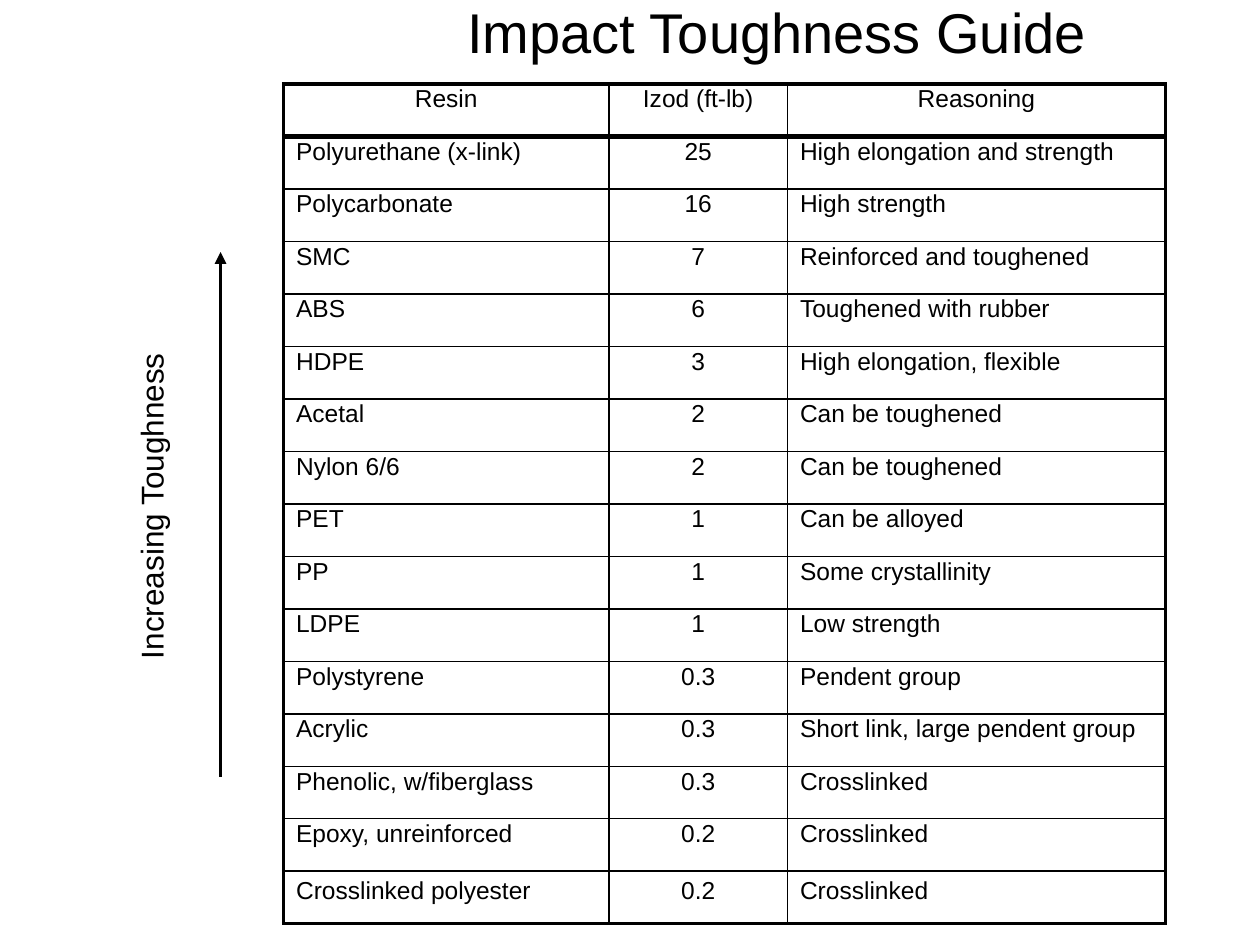
from typing import NamedTuple

from lxml.etree import SubElement
from pptx import Presentation
from pptx.dml.color import RGBColor
from pptx.enum.shapes import MSO_CONNECTOR
from pptx.enum.text import MSO_ANCHOR, MSO_AUTO_SIZE, PP_ALIGN
from pptx.oxml.ns import qn
from pptx.util import Pt

FONT = "Arial"
BLACK = "000000"
THIN, OUTER, HEADER_RULE = 1, 2.25, 3
COLUMN_WIDTHS = (186, 102, 216)
ROW_HEIGHT = 30


class Resin(NamedTuple):
    name: str
    izod: str
    reasoning: str


ROWS = [
    Resin("Resin", "Izod (ft-lb)", "Reasoning"),
    Resin("Polyurethane (x-link)", "25", "High elongation and strength"),
    Resin("Polycarbonate", "16", "High strength"),
    Resin("SMC", "7", "Reinforced and toughened"),
    Resin("ABS", "6", "Toughened with rubber"),
    Resin("HDPE", "3", "High elongation, flexible"),
    Resin("Acetal", "2", "Can be toughened"),
    Resin("Nylon 6/6", "2", "Can be toughened"),
    Resin("PET", "1", "Can be alloyed"),
    Resin("PP", "1", "Some crystallinity"),
    Resin("LDPE", "1", "Low strength"),
    Resin("Polystyrene", "0.3", "Pendent group"),
    Resin("Acrylic", "0.3", "Short link, large pendent group"),
    Resin("Phenolic, w/fiberglass", "0.3", "Crosslinked"),
    Resin("Epoxy, unreinforced", "0.2", "Crosslinked"),
    Resin("Crosslinked polyester", "0.2", "Crosslinked"),
]


def rgb(color: str) -> RGBColor:
    return RGBColor.from_string(color)


def write(tf, text: str, size: float, align=PP_ALIGN.LEFT):
    """Fill a text frame with one formatted paragraph and return it."""
    tf.text = text
    p = tf.paragraphs[0]
    p.alignment = align
    font = p.runs[0].font
    font.name, font.size, font.bold = FONT, Pt(size), False
    font.color.rgb = rgb(BLACK)
    return p


def place(s, left: float, top: float, width: float, height: float) -> None:
    s.left, s.top, s.width, s.height = map(Pt, (left, top, width, height))


def set_borders(cell, left: float, right: float, top: float, bottom: float) -> None:
    tc_pr = cell._tc.get_or_add_tcPr()
    for side, width in zip("LRTB", (left, right, top, bottom)):
        ln = SubElement(tc_pr, qn(f"a:ln{side}"), w=str(Pt(width)))
        fill = SubElement(ln, qn("a:solidFill"))
        SubElement(fill, qn("a:srgbClr"), val=BLACK)


def add_resin_table(slide, left: float, top: float) -> None:
    n_rows, n_cols = len(ROWS), len(COLUMN_WIDTHS)
    last_row, last_col = n_rows - 1, n_cols - 1
    table = slide.shapes.add_table(
        n_rows, n_cols, Pt(left), Pt(top),
        Pt(sum(COLUMN_WIDTHS)), Pt(n_rows * ROW_HEIGHT)).table
    table.first_row = table.horz_banding = False
    for column, width in zip(table.columns, COLUMN_WIDTHS):
        column.width = Pt(width)
    # Heavy outer frame, heavier rule below the header, thin inner grid
    rules = [OUTER, HEADER_RULE] + [THIN] * (n_rows - 2) + [OUTER]
    for i, resin in enumerate(ROWS):
        table.rows[i].height = Pt(ROW_HEIGHT)
        for j, text in enumerate(resin):
            cell = table.cell(i, j)
            centred = i == 0 or j == 1
            p = write(cell.text_frame, text, 14,
                      PP_ALIGN.CENTER if centred else PP_ALIGN.LEFT)
            if i < last_row:
                p.line_spacing = 0.8
            set_borders(cell, OUTER if j == 0 else THIN,
                        OUTER if j == last_col else THIN, rules[i], rules[i + 1])
            cell.fill.background()


def add_arrow(slide, x: float, y_from: float, y_to: float) -> None:
    s = slide.shapes.add_connector(
        MSO_CONNECTOR.STRAIGHT, Pt(x), Pt(y_from), Pt(x), Pt(y_to))
    s.line.color.rgb = rgb(BLACK)
    s.line.width = Pt(OUTER)
    SubElement(s.line._get_or_add_ln(), qn("a:tailEnd"), type="triangle")
    SubElement(s._element.spPr, qn("a:effectLst"))


def main() -> None:
    prs = Presentation()
    prs.slide_width, prs.slide_height = Pt(720), Pt(540)
    slide = prs.slides.add_slide(prs.slide_layouts[5])

    # Title
    title = slide.shapes.title
    place(title, 168, 0, 552, 36)
    title.text_frame.vertical_anchor = MSO_ANCHOR.MIDDLE
    title.text_frame.auto_size = MSO_AUTO_SIZE.NONE
    write(title.text_frame, "Impact Toughness Guide", 32, PP_ALIGN.CENTER)

    # Resin table
    add_resin_table(slide, 162, 48)

    # Toughness direction: arrow and its upright label
    add_arrow(slide, 126, 444, 144)
    label = slide.shapes.add_textbox(Pt(-9.4), Pt(273.6), Pt(191.5), Pt(28.8))
    label.rotation = 270
    tf = label.text_frame
    tf.word_wrap = False
    tf.auto_size = MSO_AUTO_SIZE.SHAPE_TO_FIT_TEXT
    write(tf, "Increasing Toughness", 18)

    prs.save("out.pptx")


if __name__ == "__main__":
    main()
